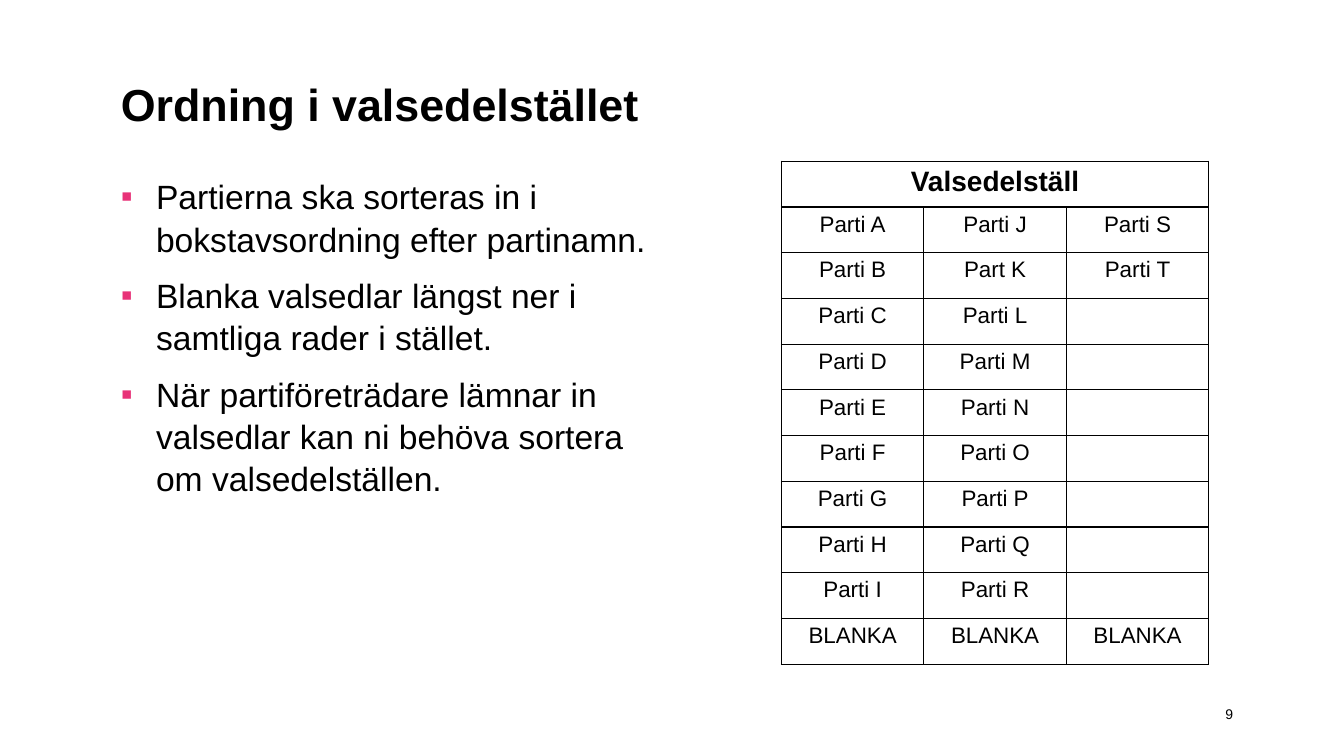
"""Build the slide on the order of parties in the ballot paper rack."""
from dataclasses import dataclass, field
from typing import Any

from lxml import etree
from pptx import Presentation
from pptx.dml.color import RGBColor
from pptx.enum.text import MSO_ANCHOR, PP_ALIGN
from pptx.oxml.ns import qn
from pptx.util import Inches, Pt

BLACK = RGBColor(0x00, 0x00, 0x00)
PINK = RGBColor(0xE8, 0x32, 0x78)
CENTER, RIGHT = PP_ALIGN.CENTER, PP_ALIGN.RIGHT
TOP, MIDDLE, BOTTOM = MSO_ANCHOR.TOP, MSO_ANCHOR.MIDDLE, MSO_ANCHOR.BOTTOM

FONT_NAME = "Arial"
BULLET = "▪"
BULLET_INDENT = Inches(0.35)
BORDER_WIDTH = Pt(1)
BORDER_SIDES = ("lnL", "lnR", "lnT", "lnB")

RACK_TITLE = "Valsedelställ"
BLANK_BALLOT = "BLANKA"
PARTY_ROWS = 9
RACK_COLUMNS = [
    [f"Parti {letter}" for letter in "ABCDEFGHI"],
    ["Parti J", "Part K"] + [f"Parti {letter}" for letter in "LMNOPQR"],
    ["Parti S", "Parti T"],
]


@dataclass
class TextBlock:
    """A text box with its paragraphs and format values."""

    left: float
    top: float
    width: float
    height: float
    lines: list[str]
    size: int
    bold: bool = False
    bulleted: bool = False
    frame_format: dict[str, Any] = field(default_factory=dict)
    paragraph_format: dict[str, Any] = field(default_factory=dict)


TEXT_BLOCKS = [
    TextBlock(1.1, 0.56, 11.13, 0.79, ["Ordning i valsedelstället"], 32, bold=True,
              frame_format={"vertical_anchor": BOTTOM},
              paragraph_format={"line_spacing": 0.9}),
    TextBlock(1.1, 1.68, 5.46, 4.76, [
        "Partierna ska sorteras in i bokstavsordning efter partinamn.",
        "Blanka valsedlar längst ner i samtliga rader i stället.",
        "När partiföreträdare lämnar in valsedlar kan ni behöva sortera om valsedelställen.",
    ], 24, bulleted=True,
        frame_format={"vertical_anchor": TOP},
        paragraph_format={"line_spacing": 1.05}),
    TextBlock(11.76, 6.88, 0.47, 0.4, ["9"], 10,
              frame_format={"vertical_anchor": MIDDLE, "margin_right": 0},
              paragraph_format={"alignment": RIGHT}),
]


def apply_format(target: Any, values: dict[str, Any]) -> None:
    """Set each format value on the target."""
    for name, value in values.items():
        setattr(target, name, value)


def style_font(font: Any, size: int, bold: bool) -> None:
    """Give a font the slide's typeface and colour."""
    apply_format(font, {"name": FONT_NAME, "size": Pt(size), "bold": bold})
    font.color.rgb = BLACK


def add_bullet(para: Any) -> None:
    """Give a paragraph a hanging pink square bullet."""
    properties = para._p.get_or_add_pPr()
    properties.set("marL", str(BULLET_INDENT))
    properties.set("indent", str(-BULLET_INDENT))
    colour = etree.SubElement(properties, qn("a:buClr"))
    etree.SubElement(colour, qn("a:srgbClr"), val=str(PINK))
    etree.SubElement(properties, qn("a:buFont"), typeface=FONT_NAME)
    etree.SubElement(properties, qn("a:buChar"), char=BULLET)


def add_text_block(page: Any, block: TextBlock) -> None:
    """Draw one text block on the page."""
    box = page.shapes.add_textbox(Inches(block.left), Inches(block.top),
                                  Inches(block.width), Inches(block.height))
    frame = box.text_frame
    apply_format(frame, {"word_wrap": True} | block.frame_format)
    for index, line in enumerate(block.lines):
        para = frame.add_paragraph() if index else frame.paragraphs[0]
        if block.bulleted:
            add_bullet(para)
        apply_format(para, block.paragraph_format)
        if index:
            para.space_before = Pt(10)
        span = para.add_run()
        span.text = line
        style_font(span.font, block.size, block.bold)


def add_borders(cell: Any) -> None:
    """Draw black lines on all sides of a cell."""
    properties = cell._tc.get_or_add_tcPr()
    for position, side in enumerate(BORDER_SIDES):
        line = etree.Element(qn(f"a:{side}"), w=str(BORDER_WIDTH))
        fill = etree.SubElement(line, qn("a:solidFill"))
        etree.SubElement(fill, qn("a:srgbClr"), val=str(BLACK))
        properties.insert(position, line)


def fill_cell(cell: Any, text: str, size: int, bold: bool) -> None:
    """Write centred text into a bordered cell."""
    cell.fill.background()
    add_borders(cell)
    para = cell.text_frame.paragraphs[0]
    para.alignment = CENTER
    if text:
        span = para.add_run()
        span.text = text
        style_font(span.font, size, bold)


def add_rack_table(page: Any) -> None:
    """Draw the rack with its title, parties and blank ballots."""
    row_count, column_count = PARTY_ROWS + 2, len(RACK_COLUMNS)
    rack = page.shapes.add_table(row_count, column_count, Inches(7.75), Inches(1.6),
                                 Inches(4.24), Inches(4.99)).table
    apply_format(rack, {"first_row": False, "horz_banding": False})
    rack.cell(0, 0).merge(rack.cell(0, column_count - 1))
    for column, parties in enumerate(RACK_COLUMNS):
        fill_cell(rack.cell(0, column), "" if column else RACK_TITLE, 20, True)
        gaps = [""] * (PARTY_ROWS - len(parties))
        for row, text in enumerate(parties + gaps + [BLANK_BALLOT], start=1):
            fill_cell(rack.cell(row, column), text, 16, False)


def main() -> None:
    """Build and save the deck."""
    deck = Presentation()
    apply_format(deck, {"slide_width": Inches(13.33), "slide_height": Inches(7.5)})
    page = deck.slides.add_slide(deck.slide_layouts[6])
    for block in TEXT_BLOCKS:
        add_text_block(page, block)
    add_rack_table(page)
    deck.save("out.pptx")


if __name__ == "__main__":
    main()
